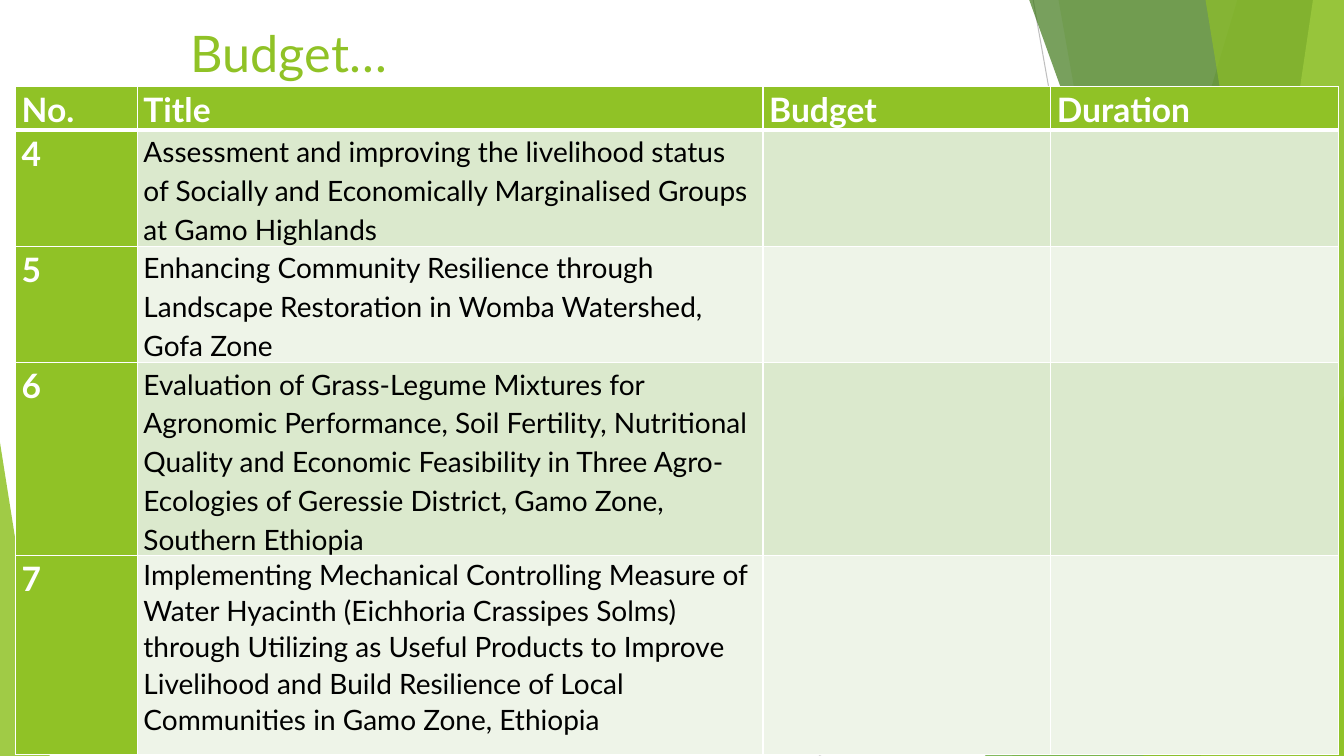
from pptx import Presentation
from pptx.dml.color import RGBColor
from pptx.enum.shapes import MSO_CONNECTOR as CONN, MSO_SHAPE as SHAPE
from pptx.enum.text import MSO_ANCHOR as ANCHOR
from pptx.oxml.ns import qn
from pptx.util import Pt
from lxml.etree import SubElement

W, H = 960, 540
FONT = "Lato"
WHITE = RGBColor(0xFF, 0xFF, 0xFF)
BLACK = RGBColor(0, 0, 0)
GREEN = RGBColor(0x90, 0xC2, 0x26)
LEAF = RGBColor(0x54, 0xA0, 0x21)
FOREST = RGBColor(0x3F, 0x78, 0x19)
LIME = RGBColor(0xC0, 0xE4, 0x74)
BAND_DARK = RGBColor(0xDB, 0xE9, 0xCD)
BAND_LIGHT = RGBColor(0xEE, 0xF4, 0xE8)
GREY = RGBColor(0xBF, 0xBF, 0xBF)
PALE_GREY = RGBColor(0xD9, 0xD9, 0xD9)

COLUMNS = [("No.", 87), ("Title", 447), ("Budget", 205.5), ("Duration", 205.5)]
HEADER_HEIGHT = 31
# number, title, row height, line spacing
PROJECTS = [
    ("4", "Assessment and improving the livelihood status of Socially and "
          "Economically Marginalised Groups at Gamo Highlands", 80, 1.15),
    ("5", "Enhancing Community Resilience through Landscape Restoration in "
          "Womba Watershed, Gofa Zone", 83, 1.15),
    ("6", "Evaluation of Grass-Legume Mixtures for Agronomic Performance, Soil "
          "Fertility, Nutritional Quality and Economic Feasibility in Three "
          "Agro-Ecologies of Geressie District, Gamo Zone, Southern Ethiopia",
     130, 1.15),
    ("7", "Implementing Mechanical Controlling Measure of Water Hyacinth "
          "(Eichhoria Crassipes Solms) through Utilizing as Useful Products to "
          "Improve Livelihood and Build Resilience of Local Communities in Gamo "
          "Zone, Ethiopia", 142, 1.07),
]


def write(tf, text, size=24, color=WHITE, bold=False, spacing=None):
    tf.word_wrap = True
    p = tf.paragraphs[0]
    if spacing:
        p.line_spacing = spacing
    r = p.add_run()
    r.text = text
    r.font.name, r.font.size, r.font.bold = FONT, Pt(size), bold
    r.font.color.rgb = color


def paint(sp, color, opacity):
    """Fill without outline or shadow; opacity is in percent."""
    sp.shadow.inherit = False
    sp.line.fill.background()
    sp.fill.solid()
    sp.fill.fore_color.rgb = color
    clr = sp.fill._xPr.find(qn("a:solidFill"))[0]
    SubElement(clr, qn("a:alpha")).set("val", str(opacity * 1000))


def add_line(s, x1, y1, x2, y2, color):
    c = s.shapes.add_connector(CONN.STRAIGHT, Pt(x1), Pt(y1), Pt(x2), Pt(y2))
    c.line.color.rgb, c.line.width = color, Pt(0.75)
    SubElement(c._element.spPr, qn("a:effectLst"))


def add_triangle(s, x, y, w, h, apex, color, opacity):
    sp = s.shapes.add_shape(SHAPE.ISOSCELES_TRIANGLE, Pt(x), Pt(y), Pt(w), Pt(h))
    sp.adjustments[0] = apex
    paint(sp, color, opacity)


def add_facet(s, right, top, bottom, top_width, bottom_width, color, opacity):
    """Quadrilateral against the right edge with a slanting left side."""
    fb = s.shapes.build_freeform(Pt(right - top_width), Pt(top))
    fb.add_line_segments([(Pt(right), Pt(top)), (Pt(right), Pt(bottom)),
                          (Pt(right - bottom_width), Pt(bottom))])
    paint(fb.convert_to_shape(), color, opacity)


def add_backdrop(s, x, y, w, h):
    right, bottom = x + w, y + h

    def facet(top_width, bottom_width, color, opacity):
        add_facet(s, right, y - 0.6, bottom, top_width, bottom_width,
                  color, opacity)

    def corner(tw, th, color, opacity):
        add_triangle(s, right - tw, bottom - th, tw, th, 1, color, opacity)

    add_line(s, right - 222, y, right - 126, bottom, GREY)
    add_line(s, right, y + 290, right - 375, bottom, PALE_GREY)
    facet(76, 237, GREEN, 30)
    facet(204, 108, GREEN, 20)
    corner(256.5, 300, LEAF, 72)
    facet(225, 30.5, FOREST, 70)
    facet(22, 102, LIME, 70)
    facet(99, 11, GREEN, 65)
    corner(143.5, 257, GREEN, 80)
    add_triangle(s, x, bottom - 224, 35.5, 224, 0, GREEN, 85)


def add_title(s, x, y, w, h, text):
    tf = s.shapes.add_textbox(Pt(x), Pt(y), Pt(w), Pt(h)).text_frame
    tf.vertical_anchor = ANCHOR.MIDDLE
    write(tf, text, size=36, color=GREEN)


def style_cell(cell, color, top, bottom):
    """Set insets, white borders of the given widths, and fill."""
    cell.margin_left = cell.margin_right = Pt(4.5)
    cell.margin_top = cell.margin_bottom = 0
    tcPr = cell._tc.get_or_add_tcPr()
    for side, width in (("L", 1), ("R", 1), ("T", top), ("B", bottom)):
        ln = SubElement(tcPr, qn(f"a:ln{side}"), w=str(Pt(width)))
        fill = SubElement(ln, qn("a:solidFill"))
        SubElement(fill, qn("a:srgbClr"), val=str(WHITE))
    cell.fill.solid()
    cell.fill.fore_color.rgb = color


def add_budget_table(s, x, y):
    heights = [HEADER_HEIGHT] + [project[2] for project in PROJECTS]
    widths = [width for _, width in COLUMNS]
    table = s.shapes.add_table(len(heights), len(widths), Pt(x), Pt(y),
                               Pt(sum(widths)), Pt(sum(heights))).table
    table.first_row = table.horz_banding = False
    for column, width in zip(table.columns, widths):
        column.width = Pt(width)
    for i, height in enumerate(heights):
        table.rows[i].height = Pt(height)
        band = BAND_DARK if i % 2 else BAND_LIGHT
        for j in range(len(widths)):
            style_cell(table.cell(i, j), GREEN if i == 0 or j == 0 else band,
                       top=3 if i == 1 else 1, bottom=3 if i == 0 else 1)
    for j, (heading, _) in enumerate(COLUMNS):
        write(table.cell(0, j).text_frame, heading, bold=True, spacing=1.07)
    for i, (number, title, _, spacing) in enumerate(PROJECTS, 1):
        write(table.cell(i, 0).text_frame, number, bold=True, spacing=1.07)
        write(table.cell(i, 1).text_frame, title, size=20, color=BLACK,
              spacing=spacing)


def main():
    prs = Presentation()
    prs.slide_width, prs.slide_height = Pt(W), Pt(H)
    s = prs.slides.add_slide(prs.slide_layouts[6])
    add_backdrop(s, 0, 0, W, H)
    add_title(s, 129, 12, 702, 51, "Budget…")
    add_budget_table(s, 11, 62)
    prs.save("out.pptx")


if __name__ == "__main__":
    main()
